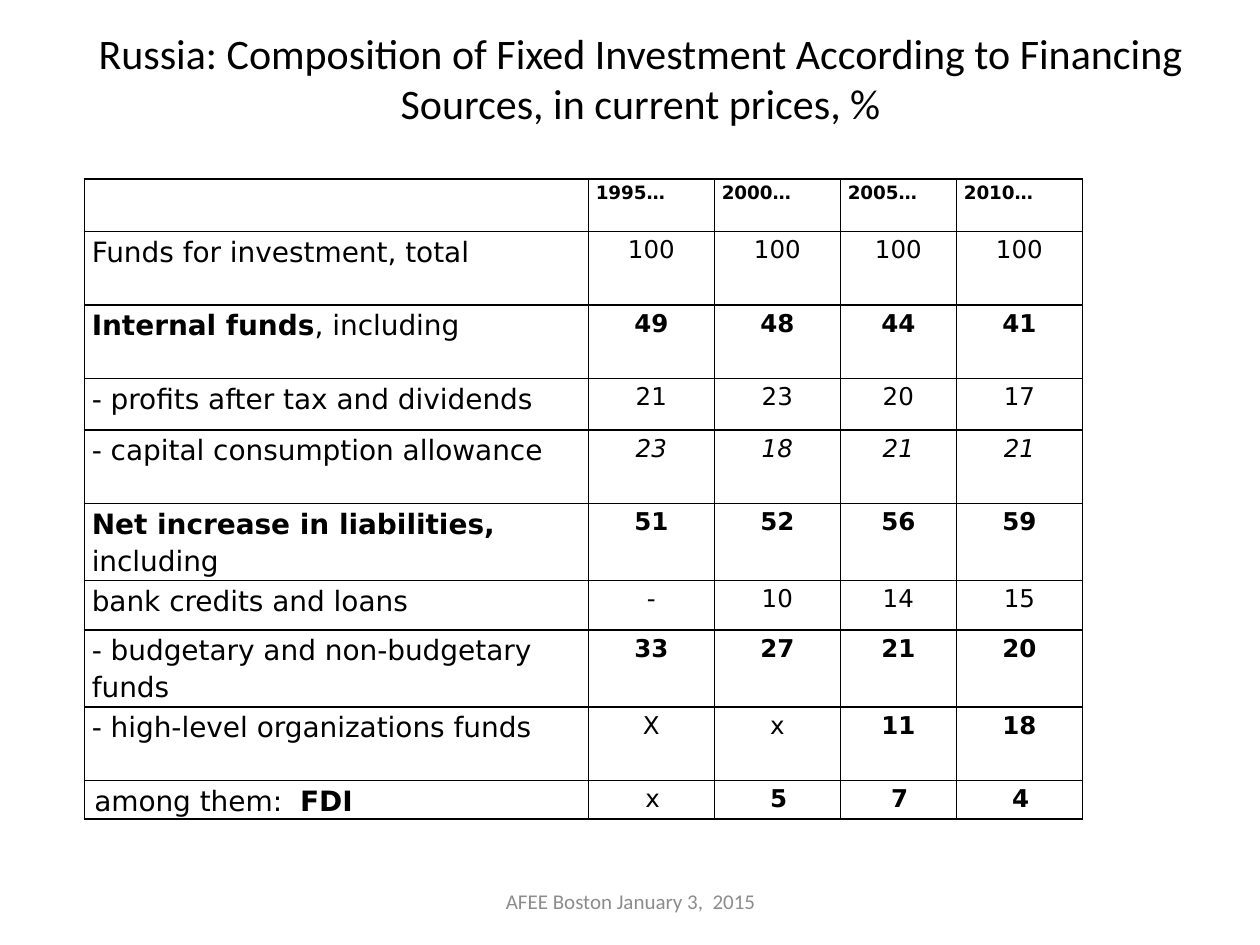
from lxml import etree
from pptx import Presentation
from pptx.dml.color import RGBColor
from pptx.enum.text import MSO_ANCHOR, PP_ALIGN
from pptx.oxml.ns import qn
from pptx.util import Cm, Pt

LEFT, CENTER = PP_ALIGN.LEFT, PP_ALIGN.CENTER
MIDDLE = MSO_ANCHOR.MIDDLE
BODY_FONT, TABLE_FONT = "Calibri", "DejaVu Sans"
BLACK, GREY = "000000", "8C8C8C"

YEARS = ["1995…", "2000…", "2005…", "2010…"]
COL_WIDTHS = [10.16, 2.54, 2.54, 2.34, 2.54]
HEADER_HEIGHT = 1.06

# Height, label runs and values; a leading * marks bold
ROWS = [
    (1.48, ["Funds for investment, total"], ["100", "100", "100", "100"]),
    (1.48, ["*Internal funds", ", including"], ["*49", "*48", "*44", "*41"]),
    (1.04, ["- profits after tax and dividends"], ["21", "23", "20", "17"]),
    (1.48, ["- capital consumption allowance"], ["23", "18", "21", "21"]),
    (1.48, ["*Net increase in liabilities, ", "including"],
     ["*51", "*52", "*56", "*59"]),
    (0.99, ["bank credits and loans"], ["-", "10", "14", "15"]),
    (1.48, ["- budgetary and non-budgetary funds"],
     ["*33", "*27", "*21", "*20"]),
    (1.48, ["- high-level organizations funds"], ["Х", "х", "*11", "*18"]),
    (0.74, ["among them:  ", "*FDI"], ["x", "*5", "*7", "*4"]),
]
ITALIC_ROW = 4
INDENTED_ROW = len(ROWS)


def rgb(color):
    return RGBColor.from_string(color)


def write(tf, runs, size, font=TABLE_FONT, color=BLACK, align=LEFT,
          italic=False, spacing=1.0, after=0, indent=0):
    p = tf.paragraphs[0]
    p.alignment = align
    p.line_spacing = spacing
    p.space_after = Pt(after)
    if indent:
        p._p.get_or_add_pPr().set("indent", str(Cm(indent)))
    for text in runs:
        r = p.add_run()
        r.text = text.removeprefix("*")
        r.font.name = font
        r.font.size = Pt(size)
        r.font.bold = text.startswith("*")
        r.font.italic = italic
        r.font.color.rgb = rgb(color)


def add_text(s, text, left, top, width, height, **fmt):
    sp = s.shapes.add_textbox(Cm(left), Cm(top), Cm(width), Cm(height))
    tf = sp.text_frame
    tf.word_wrap = True
    tf.vertical_anchor = MIDDLE
    write(tf, [text], font=BODY_FONT, align=CENTER, **fmt)


def style_cell(cell):
    cell.margin_left = cell.margin_right = Cm(0.15)
    cell.margin_top = cell.margin_bottom = 0
    tcPr = cell._tc.get_or_add_tcPr()
    for side in ("a:lnL", "a:lnR", "a:lnT", "a:lnB"):
        ln = etree.SubElement(tcPr, qn(side), w=str(Pt(1)))
        fill = etree.SubElement(ln, qn("a:solidFill"))
        etree.SubElement(fill, qn("a:srgbClr"), val=BLACK)
    cell.fill.background()


def add_funds_table(s, left, top):
    heights = [HEADER_HEIGHT] + [row[0] for row in ROWS]
    frame = s.shapes.add_table(len(heights), len(COL_WIDTHS), Cm(left), Cm(top),
                               Cm(sum(COL_WIDTHS)), Cm(sum(heights)))
    table = frame.table
    table.first_row = table.horz_banding = False
    for column, width in zip(table.columns, COL_WIDTHS):
        column.width = Cm(width)
    for row, height in zip(table.rows, heights):
        row.height = Cm(height)
    for cell in table.iter_cells():
        style_cell(cell)

    # Year headings
    for j, year in enumerate(YEARS, 1):
        write(table.cell(0, j).text_frame, ["*" + year], 10.5,
              spacing=1.15, after=10)

    # Labels and shares
    for i, (_, label, values) in enumerate(ROWS, 1):
        indent = 0.05 if i == INDENTED_ROW else 0
        write(table.cell(i, 0).text_frame, label, 16,
              spacing=1.15, indent=indent)
        for j, value in enumerate(values, 1):
            write(table.cell(i, j).text_frame, [value], 14, align=CENTER,
                  italic=i == ITALIC_ROW, spacing=1.15, after=10,
                  indent=indent)


def main():
    prs = Presentation()
    prs.slide_width, prs.slide_height = Cm(25.4), Cm(19.05)
    s = prs.slides.add_slide(prs.slide_layouts[6])

    # Title
    add_text(s, "Russia: Composition of Fixed Investment According to "
             "Financing Sources, in current prices, %",
             1.27, -0.43, 23.29, 3.99, size=24)
    # Table
    add_funds_table(s, 1.7, 3.61)
    # Footer
    add_text(s, "AFEE Boston January 3,  2015",
             8.69, 17.65, 8.05, 1.02, size=12, color=GREY)

    prs.save("out.pptx")


if __name__ == "__main__":
    main()
